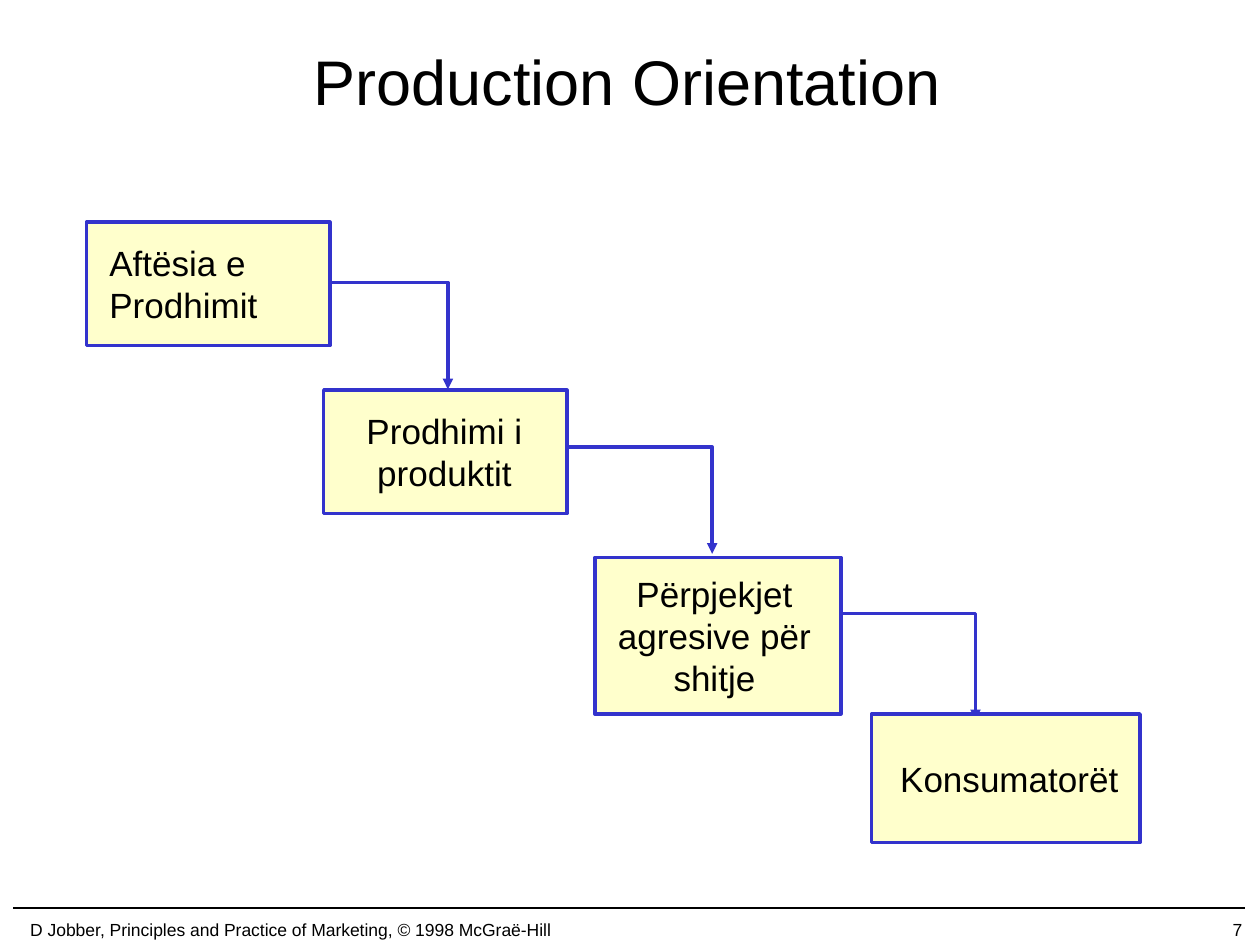
import pptx
import pptx.util
import pptx.dml.color
import pptx.enum.shapes
import pptx.enum.text
import pptx.oxml.xmlchemy

Pt = pptx.util.Pt
RGB = pptx.dml.color.RGBColor.from_string
ALIGN = pptx.enum.text.PP_ALIGN
MIDDLE = pptx.enum.text.MSO_ANCHOR.MIDDLE
COLORS = {"text": "000000", "box": "FFFFCC", "outline": "3333CC"}


def write(frame, text, size, align):
    frame.vertical_anchor = MIDDLE
    paragraph = frame.paragraphs[0]
    paragraph.alignment = align
    run = paragraph.add_run()
    run.text = text
    run.font.size = Pt(size)
    run.font.name = "Arial"
    run.font.color.rgb = RGB(COLORS["text"])


def set_line(shape, color, width):
    shape.line.color.rgb = RGB(COLORS[color])
    shape.line.width = Pt(width)


deck = pptx.Presentation()
deck.slide_width, deck.slide_height = Pt(720), Pt(540)
slide = deck.slides.add_slide(deck.slide_layouts[5])
shapes = slide.shapes

# Title
title = shapes.title
title.left, title.top, title.width, title.height = Pt(52.5), Pt(1), Pt(612), Pt(90)
write(title.text_frame, "Production Orientation", 36, ALIGN.CENTER)

# Footer: rule, source and page number
rule = shapes.add_connector(pptx.enum.shapes.MSO_CONNECTOR.STRAIGHT,
                            Pt(7.5), Pt(519), Pt(711.5), Pt(519))
set_line(rule, "text", 1)
rule._element.spPr.append(pptx.oxml.xmlchemy.OxmlElement("a:effectLst"))

footer = [
    ("D Jobber, Principles and Practice of Marketing, © 1998 McGraë-Hill", 0, 332, ALIGN.CENTER),
    ("7", 567.5, 149.5, ALIGN.RIGHT),
]
for text, left, width, align in footer:
    note = shapes.add_textbox(Pt(left), Pt(522), Pt(width), Pt(18))
    note.text_frame.word_wrap = True
    write(note.text_frame, text, 10, align)

# Elbow arrows between the steps, behind the boxes
RUN, DROP = 86, 61
for x, y in [(170, 161.5), (321, 255.5), (471.5, 350.5)]:
    builder = shapes.build_freeform(Pt(x), Pt(y))
    builder.add_line_segments([(Pt(x + RUN), Pt(y)), (Pt(x + RUN), Pt(y + DROP))], close=False)
    arrow = builder.convert_to_shape()
    arrow.shadow.inherit = False
    arrow.fill.background()
    set_line(arrow, "outline", 2)
    head = pptx.oxml.xmlchemy.OxmlElement("a:tailEnd")
    head.set("type", "triangle")
    arrow._element.spPr.ln.append(head)

# Steps: label, left, top, width, height, left inset, right inset, alignment
steps = [
    ("Aftësia e Prodhimit", 49.5, 127, 139, 70.5, 13, 7, ALIGN.LEFT),
    ("Prodhimi i produktit", 185, 223, 139, 70.5, 7, 8, ALIGN.CENTER),
    ("Përpjekjet agresive për shitje", 340, 318.5, 140.5, 89.5, 7, 11, ALIGN.CENTER),
    ("Konsumatorët", 498, 408, 153.5, 73.5, 11, 7, ALIGN.CENTER),
]
for label, left, top, width, height, inset_left, inset_right, align in steps:
    step = shapes.add_shape(pptx.enum.shapes.MSO_SHAPE.RECTANGLE,
                            Pt(left), Pt(top), Pt(width), Pt(height))
    step.shadow.inherit = False
    step.fill.solid()
    step.fill.fore_color.rgb = RGB(COLORS["box"])
    set_line(step, "outline", 2)
    frame = step.text_frame
    frame.word_wrap = True
    frame.margin_left, frame.margin_right = Pt(inset_left), Pt(inset_right)
    write(frame, label, 20, align)

deck.save("out.pptx")
